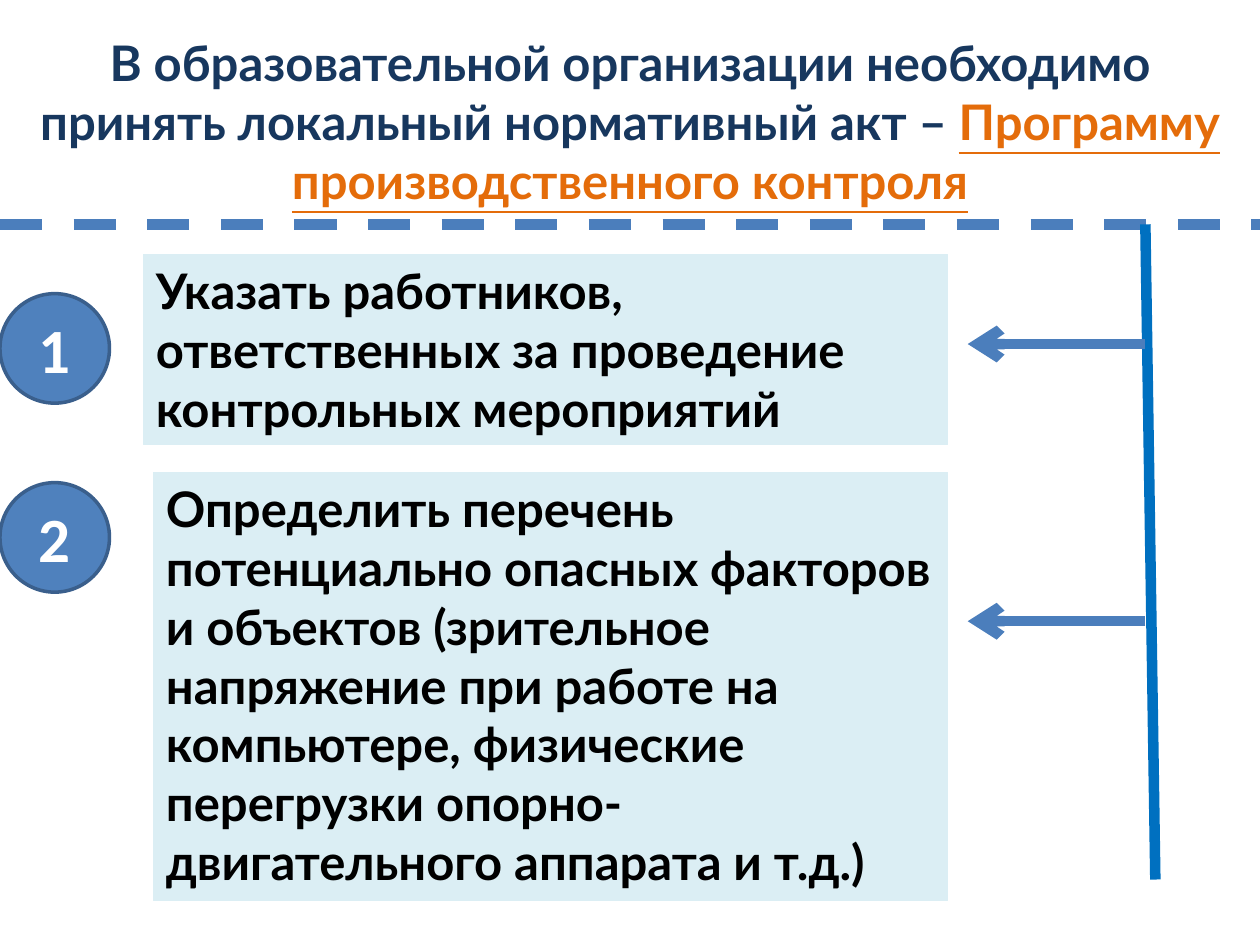
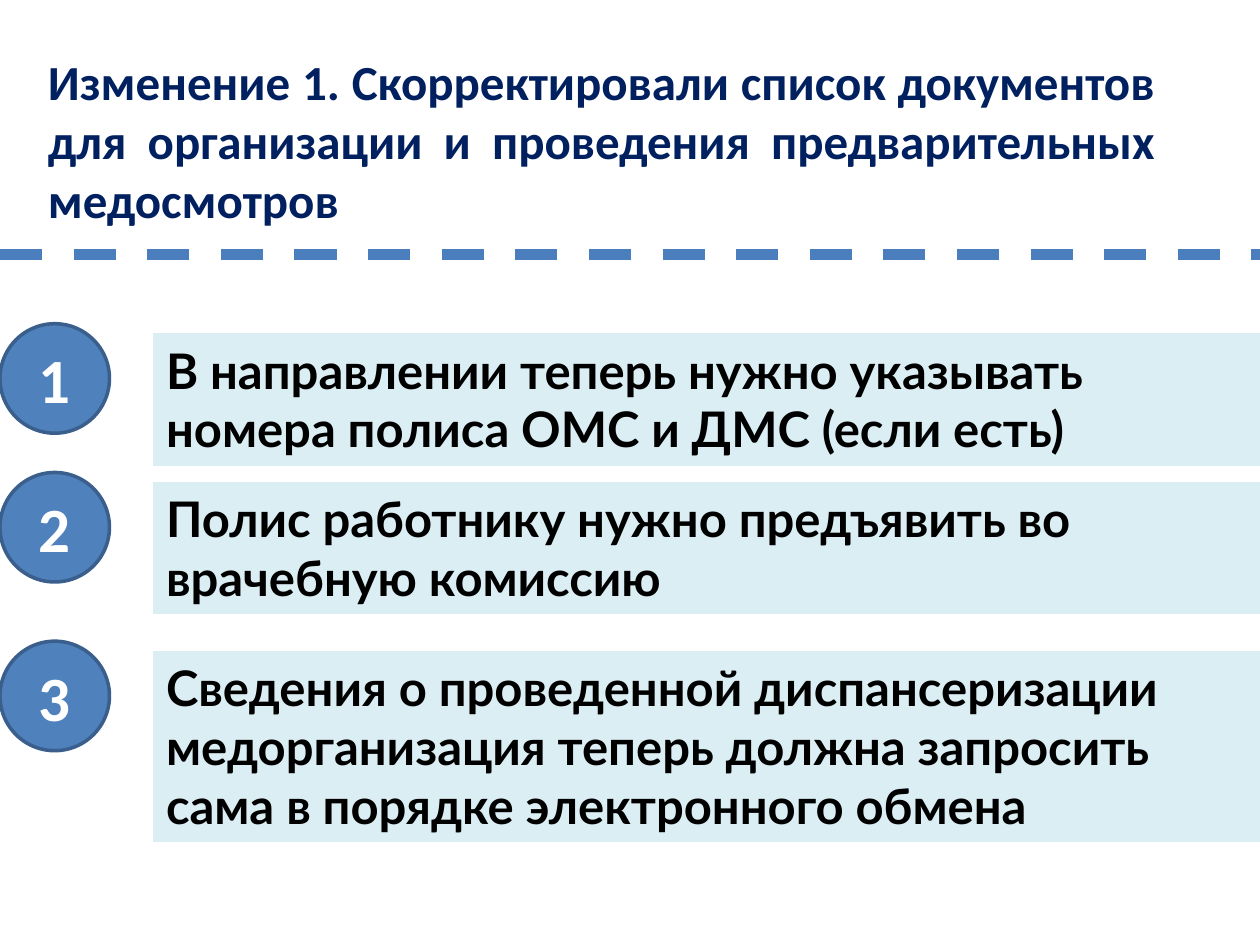
from lxml import etree
from pptx import Presentation
from pptx.dml.color import RGBColor
from pptx.enum import dml, shapes, text
from pptx.oxml import ns
from pptx.util import Pt

NAVY = RGBColor(0x17, 0x37, 0x5E)
DEEP = RGBColor(0x00, 0x20, 0x60)
ORANGE = RGBColor(0xE4, 0x6C, 0x0A)
BLUE = RGBColor(0x4F, 0x81, 0xBD)
EDGE = RGBColor(0x3A, 0x5F, 0x8C)
RULE = RGBColor(0x4B, 0x7E, 0xBC)
SPINE = RGBColor(0x00, 0x70, 0xC0)
PALE = RGBColor(0xDB, 0xEE, 0xF4)
BLACK = RGBColor(0, 0, 0)
WHITE = RGBColor(0xFF, 0xFF, 0xFF)

WIDE, HIGH = 720, 540
BALL = 62.6
LEFT = 87.8
AXIS = 654.5


def style(run, face, size, color):
    font = run.font
    font.name, font.size, font.bold = face, Pt(size), True
    font.color.rgb = color


def add_title(slide, place, align, face, parts):
    title = slide.shapes.title
    title.left, title.top, title.width, title.height = map(Pt, place)
    frame = title.text_frame
    frame.word_wrap = True
    frame.auto_size = text.MSO_AUTO_SIZE.NONE
    frame.vertical_anchor = text.MSO_ANCHOR.TOP
    para = frame.paragraphs[0]
    para.alignment = align
    for words, color, under in parts:
        run = para.add_run()
        run.text = words
        style(run, face, 28, color)
        run.font.underline = under


def add_form(slide, kind, place, fill, edge, weight, words, face, size, color):
    form = slide.shapes.add_shape(kind, *map(Pt, place))
    form.shadow.inherit = False
    form.fill.solid()
    form.fill.fore_color.rgb = fill
    form.line.color.rgb = edge
    form.line.width = Pt(weight)
    frame = form.text_frame
    frame.word_wrap = True
    frame.text = words
    style(frame.paragraphs[0].runs[0], face, size, color)
    return frame


def add_ball(slide, top, number):
    frame = add_form(slide, shapes.MSO_SHAPE.OVAL, (0, top, BALL, BALL),
                     BLUE, EDGE, 2, str(number), "Calibri", 36, WHITE)
    frame.vertical_anchor = text.MSO_ANCHOR.MIDDLE
    frame.paragraphs[0].alignment = text.PP_ALIGN.CENTER


def add_box(slide, left, top, right, height, words):
    frame = add_form(slide, shapes.MSO_SHAPE.RECTANGLE,
                     (left, top, right - left, height),
                     PALE, PALE, 0.75, words, "Lato", 28, BLACK)
    frame.vertical_anchor = text.MSO_ANCHOR.TOP
    frame.paragraphs[0].alignment = text.PP_ALIGN.LEFT


def add_line(slide, ends, color):
    line = slide.shapes.add_connector(shapes.MSO_CONNECTOR.STRAIGHT, *map(Pt, ends))
    line.line.color.rgb = color
    line.line.width = Pt(6)
    etree.SubElement(line._element.spPr, ns.qn("a:effectLst"))
    return line


def add_rule(slide, top):
    rule = add_line(slide, (0, top, WIDE, top), RULE)
    rule.line.dash_style = dml.MSO_LINE.DASH


def add_arrow(slide, top):
    arrow = add_line(slide, (AXIS, top, 553, top), RULE)
    tail = etree.SubElement(arrow.line._get_or_add_ln(), ns.qn("a:tailEnd"))
    tail.set("type", "arrow")


def build_program(slide):
    add_title(slide, (0, 15.1, WIDE, 108.7), text.PP_ALIGN.CENTER, "Lato", [
        ("В образовательной организации необходимо принять локальный "
         "нормативный акт – ", NAVY, False),
        ("Программу производственного контроля", ORANGE, True),
    ])
    steps = [
        (167.8, 82, 145.4, 108.7,
         "Указать работников, ответственных за проведение контрольных мероприятий"),
        (275.8, LEFT, 270, 244.8,
         "Определить перечень потенциально опасных факторов и объектов "
         "(зрительное напряжение при работе на компьютере, физические "
         "перегрузки опорно-двигательного аппарата и т.д.)"),
    ]
    for number, (ball, left, top, height, words) in enumerate(steps, 1):
        add_ball(slide, ball, number)
        add_box(slide, left, top, 541.4, height, words)
    add_rule(slide, 128.2)
    add_line(slide, (AXIS, 128.2, 660.2, 502.6), SPINE)
    for top in (196.6, 355):
        add_arrow(slide, top)


def build_change(slide):
    add_title(slide, (20.2, 25.9, 646.6, 108.7), text.PP_ALIGN.JUSTIFY, "Calibri", [
        ("Изменение 1. Скорректировали список документов для организации "
         "и проведения предварительных медосмотров", DEEP, False),
    ])
    steps = [
        (190.8, 74.9,
         "В направлении теперь нужно указывать номера полиса ОМС и ДМС (если есть)"),
        (275.8, 74.9, "Полис работнику нужно предъявить во врачебную комиссию"),
        (372.2, 108.7,
         "Сведения о проведенной диспансеризации медорганизация теперь "
         "должна запросить сама в порядке электронного обмена"),
    ]
    for number, (top, height, words) in enumerate(steps, 1):
        add_box(slide, LEFT, top, WIDE, height, words)
        add_ball(slide, top - 5.8, number)
    add_rule(slide, 145.4)


def main():
    deck = Presentation()
    deck.slide_width, deck.slide_height = Pt(WIDE), Pt(HIGH)
    for build in (build_program, build_change):
        build(deck.slides.add_slide(deck.slide_layouts[5]))
    deck.save("out.pptx")


if __name__ == "__main__":
    main()
